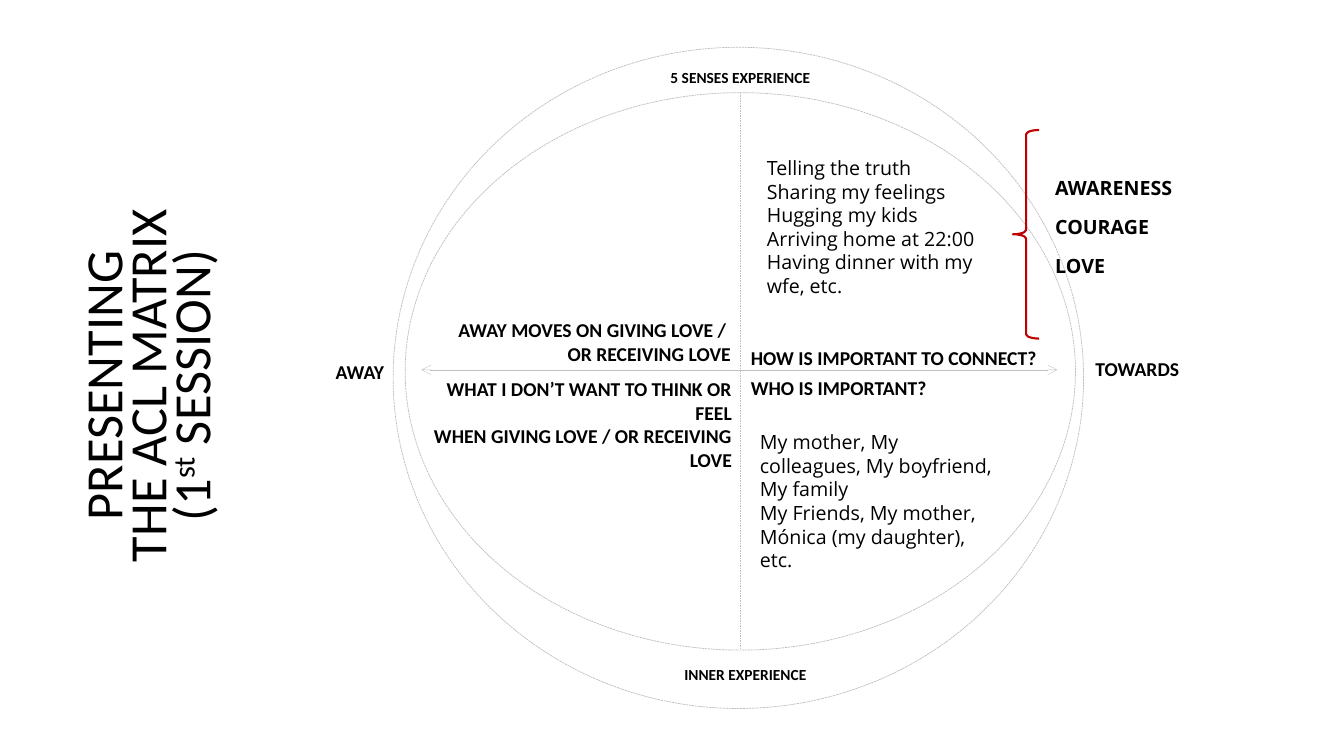
"""Build the ACL matrix slide: two ovals, crossing axes, quadrant texts and a brace."""
import lxml.etree
import pptx
import pptx.dml.color
import pptx.enum.dml
import pptx.enum.shapes
import pptx.enum.text
import pptx.oxml.ns
import pptx.util

Pt = pptx.util.Pt
SHAPE = pptx.enum.shapes.MSO_SHAPE
DASH = pptx.enum.dml.MSO_LINE
LEFT = pptx.enum.text.PP_ALIGN.LEFT
CENTER = pptx.enum.text.PP_ALIGN.CENTER
RIGHT = pptx.enum.text.PP_ALIGN.RIGHT
BLACK = pptx.dml.color.RGBColor(0x00, 0x00, 0x00)
WHITE = pptx.dml.color.RGBColor(0xFF, 0xFF, 0xFF)
GRAY = pptx.dml.color.RGBColor(0xBF, 0xBF, 0xBF)
RED = pptx.dml.color.RGBColor(0xC0, 0x00, 0x00)

presentation = pptx.Presentation()
presentation.slide_width = Pt(960)
presentation.slide_height = Pt(540)
slide = presentation.slides.add_slide(presentation.slide_layouts[6])


def add_outline(preset, left, top, width, height, color, weight):
    """Add an unfilled preset shape with a coloured outline."""
    shape = slide.shapes.add_shape(preset, Pt(left), Pt(top), Pt(width), Pt(height))
    shape.shadow.inherit = False
    shape.fill.background()
    shape.line.color.rgb = color
    shape.line.width = Pt(weight)
    return shape


def add_text(text, left, top, width, height, size=14, font="Calibri", bold=True,
             align=LEFT, wrap=True):
    """Add a text box with one paragraph for each line of text."""
    box = slide.shapes.add_textbox(Pt(left), Pt(top), Pt(width), Pt(height))
    box.text_frame.word_wrap = wrap
    box.text_frame.text = text
    for paragraph in box.text_frame.paragraphs:
        paragraph.alignment = align
        paragraph.font.size = Pt(size)
        for run in paragraph.runs:
            run.font.name = font
            run.font.size = Pt(size)
            run.font.bold = bold
            run.font.color.rgb = BLACK
    return box


outer_oval = add_outline(SHAPE.OVAL, 280.8, 33.8, 493.2, 472.3, GRAY, 0.5)
outer_oval.fill.solid()
outer_oval.fill.fore_color.rgb = WHITE
inner_oval = add_outline(SHAPE.OVAL, 289.4, 66.2, 478.8, 398.2, GRAY, 0.5)
for oval in (outer_oval, inner_oval):
    oval.line.dash_style = DASH.SQUARE_DOT

axes = []
for start_x, start_y, end_x, end_y in ((528.5, 66.2, 528.5, 464.4), (301, 264.2, 755.3, 264.2)):
    axis = slide.shapes.add_connector(
        pptx.enum.shapes.MSO_CONNECTOR.STRAIGHT, Pt(start_x), Pt(start_y), Pt(end_x), Pt(end_y))
    axis.line.color.rgb = GRAY
    axis.line.width = Pt(0.25)
    lxml.etree.SubElement(axis._element.spPr, pptx.oxml.ns.qn("a:effectLst"))
    axes.append(axis)
vertical_axis, horizontal_axis = axes
vertical_axis.line.dash_style = DASH.DASH
for end in ("a:headEnd", "a:tailEnd"):
    arrowhead = lxml.etree.SubElement(
        horizontal_axis.line._get_or_add_ln(), pptx.oxml.ns.qn(end))
    arrowhead.set("type", "arrow")

add_text("TOWARDS", 775.4, 251.3, 74.9, 24.5, wrap=False)
add_text("AWAY", 231.8, 253.4, 49.7, 24.5, align=RIGHT, wrap=False)
add_text("5 SENSES EXPERIENCE", 460.8, 45.4, 136.1, 20.9, size=11, align=CENTER)
add_text("INNER EXPERIENCE", 464.4, 471.6, 136.1, 20.9, size=11, align=CENTER)

add_text("WHAT I DON’T WANT TO THINK OR FEEL\nWHEN GIVING LOVE / OR RECEIVING LOVE",
         289.4, 265.7, 240.5, 58.3, align=RIGHT)
add_text("AWAY MOVES ON GIVING LOVE / \nOR RECEIVING LOVE", 301, 223.9, 228.2, 41, align=RIGHT)
add_text("HOW IS IMPORTANT TO CONNECT?", 529.2, 243.4, 239, 24.5)
add_text("WHO IS IMPORTANT?", 529.2, 265, 180.7, 24.5)

add_text("My mother, My colleagues, My boyfriend, My family\n"
         "My Friends, My mother, Mónica (my daughter), etc.",
         535.7, 303.8, 187.9, 126, font="Open Sans", bold=False)
add_text("Telling the truth\nSharing my feelings\nHugging my kids\n"
         "Arriving home at 22:00\nHaving dinner with my wfe, etc.",
         540.7, 108, 180.7, 143.3, font="Open Sans", bold=False)

values = add_text("AWARENESS\nCOURAGE\nLOVE", 746.6, 123.8, 159.1, 84.2, font="Open Sans")
for paragraph in values.text_frame.paragraphs:
    paragraph.line_spacing = 0.9
for paragraph in values.text_frame.paragraphs[1:]:
    paragraph.space_before = Pt(12.9)

title = add_text("PRESENTING\nTHE ACL MATRIX\n(1", -126.7, 223.2, 472.3, 104.4,
                 size=37.4, bold=False, align=CENTER)
title.rotation = 270
title.text_frame.vertical_anchor = pptx.enum.text.MSO_ANCHOR.MIDDLE
for paragraph in title.text_frame.paragraphs:
    paragraph.line_spacing = 0.7
for text, baseline in (("st", "30000"), (" SESSION)", "0")):
    run = title.text_frame.paragraphs[-1].add_run()
    run.text = text
    run.font.name = "Calibri"
    run.font.size = Pt(37.4)
    run.font.color.rgb = BLACK
    run.font._element.set("baseline", baseline)

brace = add_outline(SHAPE.LEFT_BRACE, 723.6, 92.9, 18.7, 149, RED, 1.5)
brace.adjustments[0] = 0.165
brace.adjustments[1] = 0.5

presentation.save("out.pptx")
